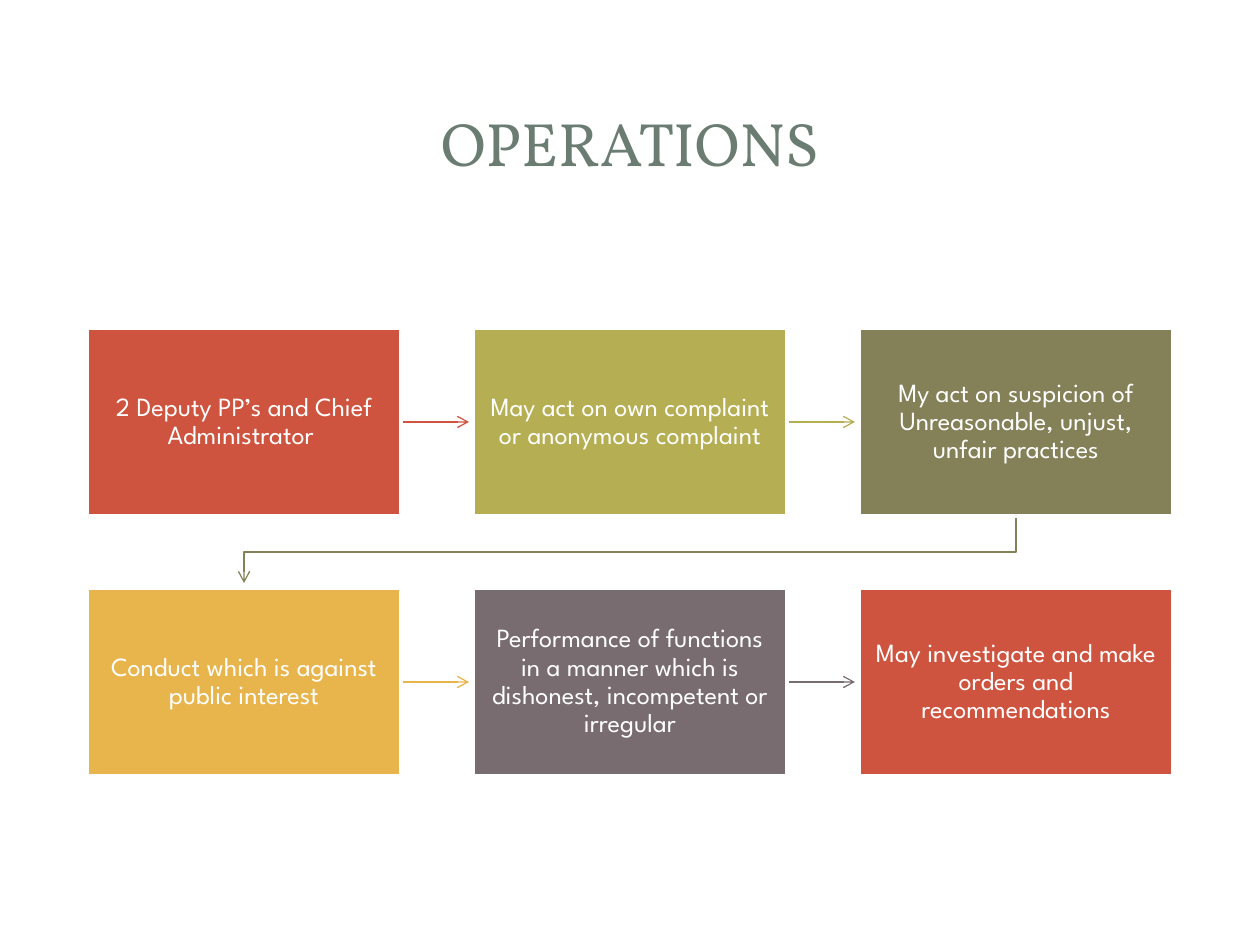
from dataclasses import dataclass

from lxml import etree
from pptx import Presentation
from pptx.dml.color import RGBColor
from pptx.enum.shapes import MSO_CONNECTOR as CONN, MSO_SHAPE as SHAPE
from pptx.enum.text import MSO_ANCHOR as ANCHOR, PP_ALIGN as ALIGN
from pptx.oxml.ns import qn
from pptx.util import Emu, Pt

EMU_PER_PX = 914400 / 126
LEFT, TOP = 87, 328
BOX_W, BOX_H = 314, 188
PITCH_X, PITCH_Y = 386, 260
COLS = 3
ARROW_W = 68
TURN_Y, TURN_END_Y = 552, 583


@dataclass
class Step:
    text: str
    color: str


STEPS = [
    Step("2 Deputy PP’s and Chief Administrator ", "CF543F"),
    Step("May act on own complaint or anonymous complaint", "B5AE53"),
    Step("My act on suspicion of Unreasonable, unjust, unfair practices", "848058"),
    Step("Conduct which is against public interest", "E8B54D"),
    Step("Performance of functions in a manner which is dishonest, "
         "incompetent or irregular", "786C71"),
    Step("May investigate and make orders and recommendations", "CF543F"),
]


def px(n: int) -> Emu:
    return Emu(round(n * EMU_PER_PX))


def rgb(color: str) -> RGBColor:
    return RGBColor.from_string(color)


def write(sp, text: str, *, font: str, size: int, color: str,
          inset_x: int, inset_y: int, spacing: float = 1.0) -> None:
    tf = sp.text_frame
    tf.word_wrap = True
    tf.vertical_anchor = ANCHOR.MIDDLE
    tf.margin_left = tf.margin_right = px(inset_x)
    tf.margin_top = tf.margin_bottom = px(inset_y)
    p = tf.paragraphs[0]
    p.alignment = ALIGN.CENTER
    p.line_spacing = spacing
    r = p.add_run()
    r.text = text
    r.font.name, r.font.size = font, Pt(size)
    r.font.color.rgb = rgb(color)


def style_arrow(sp, color: str) -> None:
    sp.line.color.rgb = rgb(color)
    sp.line.width = Pt(0.75)
    ln = sp.line._get_or_add_ln()
    etree.SubElement(ln, qn("a:tailEnd"), type="arrow")


def draw_arrow(s, x: int, y: int, color: str) -> None:
    cxn = s.shapes.add_connector(CONN.STRAIGHT, px(x), px(y), px(x + ARROW_W), px(y))
    style_arrow(cxn, color)
    etree.SubElement(cxn._element.spPr, qn("a:effectLst"))


def draw_turn(s, x: int, y: int, color: str) -> None:
    end_x = LEFT + BOX_W // 2
    builder = s.shapes.build_freeform(x, y, scale=EMU_PER_PX)
    builder.add_line_segments(
        [(x, TURN_Y), (end_x, TURN_Y), (end_x, TURN_END_Y)], close=False)
    sp = builder.convert_to_shape()
    sp.fill.background()
    style_arrow(sp, color)
    sp.shadow.inherit = False


def draw_step(s, step: Step, x: int, y: int) -> None:
    sp = s.shapes.add_shape(SHAPE.RECTANGLE, px(x), px(y), px(BOX_W), px(BOX_H))
    sp.shadow.inherit = False
    sp.fill.solid()
    sp.fill.fore_color.rgb = rgb(step.color)
    sp.line.color.rgb = rgb("FFFFFF")
    sp.line.width = Pt(2)
    write(sp, step.text, font="League Spartan", size=15, color="FFFFFF",
          inset_x=15, inset_y=16, spacing=0.9)


def main() -> None:
    prs = Presentation()
    prs.slide_width, prs.slide_height = px(1260), px(945)
    s = prs.slides.add_slide(prs.slide_layouts[6])

    title = s.shapes.add_textbox(px(LEFT), px(50), px(1086), px(183))
    write(title, "OPERATIONS", font="Vollkorn", size=35, color="6B7D72",
          inset_x=0, inset_y=6)

    for i, step in enumerate(STEPS):
        row, col = divmod(i, COLS)
        x, y = LEFT + col * PITCH_X, TOP + row * PITCH_Y
        if col < COLS - 1:
            draw_arrow(s, x + BOX_W, y + BOX_H // 2, step.color)
        elif i < len(STEPS) - 1:
            draw_turn(s, x + BOX_W // 2, y + BOX_H, step.color)
        draw_step(s, step, x, y)

    prs.save("out.pptx")


if __name__ == "__main__":
    main()
